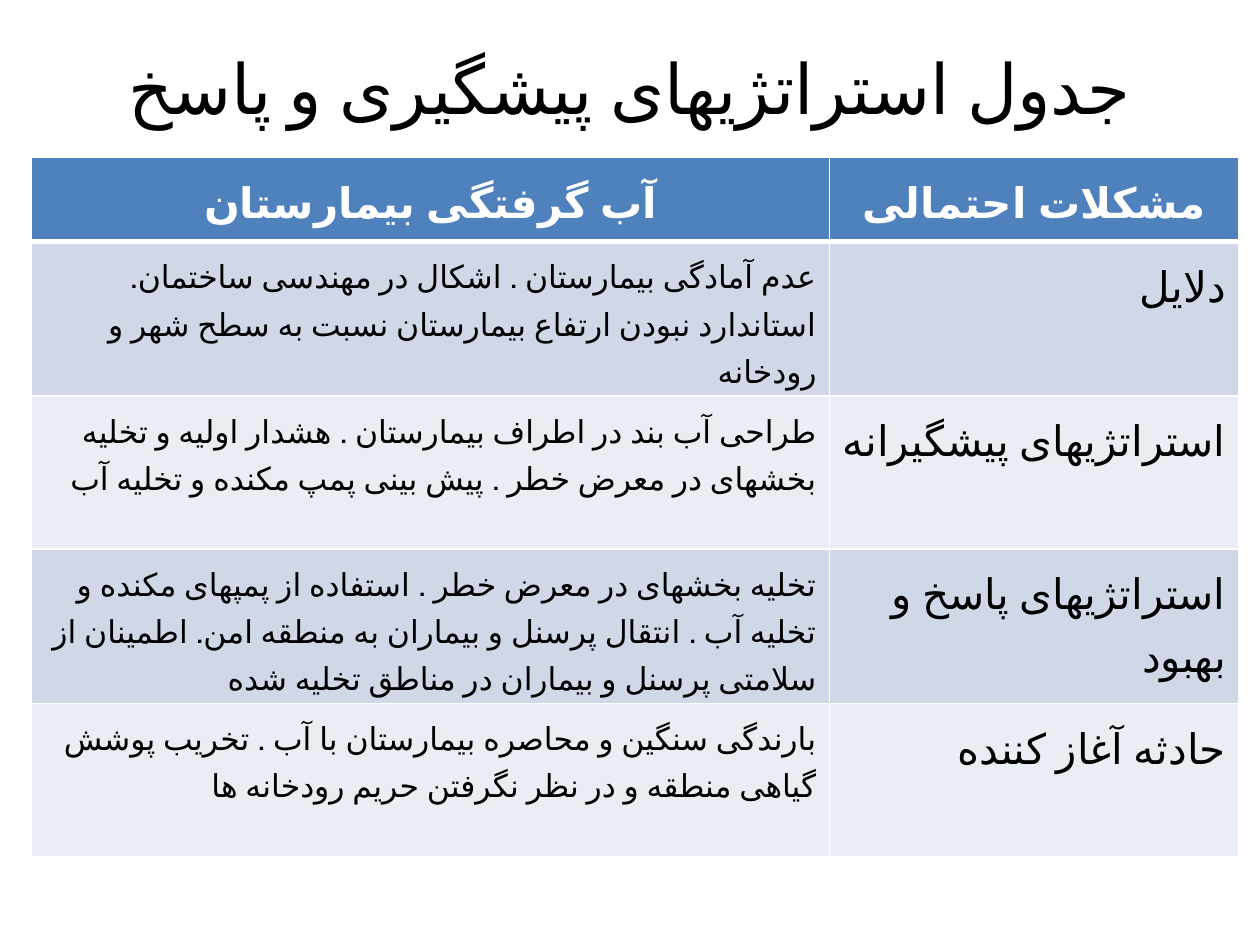
import pptx
import pptx.dml.color
import pptx.enum.text
import pptx.oxml
import pptx.oxml.ns
import pptx.util
from collections import namedtuple
from dataclasses import dataclass

Cm = pptx.util.Cm
Pt = pptx.util.Pt
Align = pptx.enum.text.PP_ALIGN
Box = namedtuple("Box", "left top width height")


@dataclass(frozen=True)
class Theme:
    font: str = "Calibri"
    language: str = "fa-IR"
    ink: str = "000000"
    header_ink: str = "FFFFFF"
    header_fill: str = "4F81BD"
    bands: tuple = ("D0D8E8", "E9EDF4")
    border: str = "FFFFFF"
    border_width: float = 1
    header_rule_width: float = 3
    title_size: float = 39.6
    label_size: float = 24
    detail_size: float = 18
    line_spacing: float = 1.5


THEME = Theme()
TITLE = "جدول استراتژیهای پیشگیری و پاسخ"
# Each row: detail on the left, label on the right
HEADER = ("آب گرفتگی بیمارستان", "مشکلات احتمالی")
ROWS = [
    ("عدم آمادگی بیمارستان . اشکال در مهندسی ساختمان. استاندارد نبودن "
     "ارتفاع بیمارستان نسبت به سطح شهر و رودخانه ", "دلایل"),
    ("طراحی آب بند در اطراف بیمارستان . هشدار اولیه و تخلیه بخشهای در "
     "معرض خطر . پیش بینی پمپ مکنده و تخلیه آب", "استراتژیهای پیشگیرانه"),
    ("تخلیه بخشهای در معرض خطر . استفاده از پمپهای مکنده و تخلیه آب . "
     "انتقال پرسنل و بیماران به منطقه امن. اطمینان از سلامتی پرسنل و "
     "بیماران در مناطق تخلیه شده", "استراتژیهای پاسخ و بهبود"),
    ("بارندگی سنگین و محاصره بیمارستان با آب . تخریب پوشش گیاهی منطقه و "
     "در نظر نگرفتن حریم رودخانه ها", "حادثه آغاز کننده"),
]


def rgb(value):
    return pptx.dml.color.RGBColor.from_string(value)


def add_span(para, text, size, color, bold=False):
    span = para.add_run()
    span.text = text
    span.font.name = THEME.font
    span.font.size = Pt(size)
    span.font.bold = bold
    span.font.color.rgb = rgb(color)
    span._r.get_or_add_rPr().set("lang", THEME.language)


def set_borders(cell, top, bottom):
    # Border lines come before the fill in the cell properties
    sides = {"L": THEME.border_width, "R": THEME.border_width,
             "T": top, "B": bottom}
    properties = cell._tc.get_or_add_tcPr()
    for position, (side, width) in enumerate(sides.items()):
        line = pptx.oxml.parse_xml(
            f'<a:ln{side} {pptx.oxml.ns.nsdecls("a")} w="{Pt(width)}">'
            f'<a:solidFill><a:srgbClr val="{THEME.border}"/></a:solidFill>'
            f'</a:ln{side}>')
        properties.insert(position, line)


def fill_cell(cell, text, fill, size, color, align, bold=False):
    cell.fill.solid()
    cell.fill.fore_color.rgb = rgb(fill)
    para = cell.text_frame.paragraphs[0]
    para.alignment = align
    para.line_spacing = THEME.line_spacing
    para._p.get_or_add_pPr().set("rtl", "1")
    add_span(para, text, size, color, bold)


def place_title(page, box):
    title = page.shapes.title
    title.left, title.top, title.width, title.height = box
    frame = title.text_frame
    frame.vertical_anchor = pptx.enum.text.MSO_ANCHOR.MIDDLE
    para = frame.paragraphs[0]
    para.alignment = Align.CENTER
    add_span(para, TITLE, THEME.title_size, THEME.ink)


def place_table(page, box, label_width, header_height):
    table = page.shapes.add_table(len(ROWS) + 1, len(HEADER), *box).table
    table.columns[0].width = box.width - label_width
    table.columns[1].width = label_width

    # Header row, with a heavy rule below
    table.rows[0].height = header_height
    for column, text in enumerate(HEADER):
        cell = table.cell(0, column)
        fill_cell(cell, text, THEME.header_fill, THEME.label_size,
                  THEME.header_ink, Align.CENTER, bold=True)
        set_borders(cell, THEME.border_width, THEME.header_rule_width)

    # Equal body rows in alternating bands
    sizes = (THEME.detail_size, THEME.label_size)
    for index, texts in enumerate(ROWS):
        table.rows[index + 1].height = (box.height - header_height) // len(ROWS)
        fill = THEME.bands[index % len(THEME.bands)]
        top = THEME.border_width if index else THEME.header_rule_width
        for column, (text, size) in enumerate(zip(texts, sizes)):
            cell = table.cell(index + 1, column)
            fill_cell(cell, text, fill, size, THEME.ink, Align.RIGHT)
            set_borders(cell, top, THEME.border_width)


def main():
    deck = pptx.Presentation()
    deck.slide_width, deck.slide_height = Cm(25.4), Cm(19.05)
    page = deck.slides.add_slide(deck.slide_layouts[5])
    place_table(page, Box(Cm(0.64), Cm(3.18), Cm(24.33), Cm(14.03)),
                label_width=Cm(8.25), header_height=Cm(1.69))
    place_title(page, Box(Cm(1.27), Cm(0.76), Cm(22.86), Cm(1.98)))
    deck.save("out.pptx")


if __name__ == "__main__":
    main()
